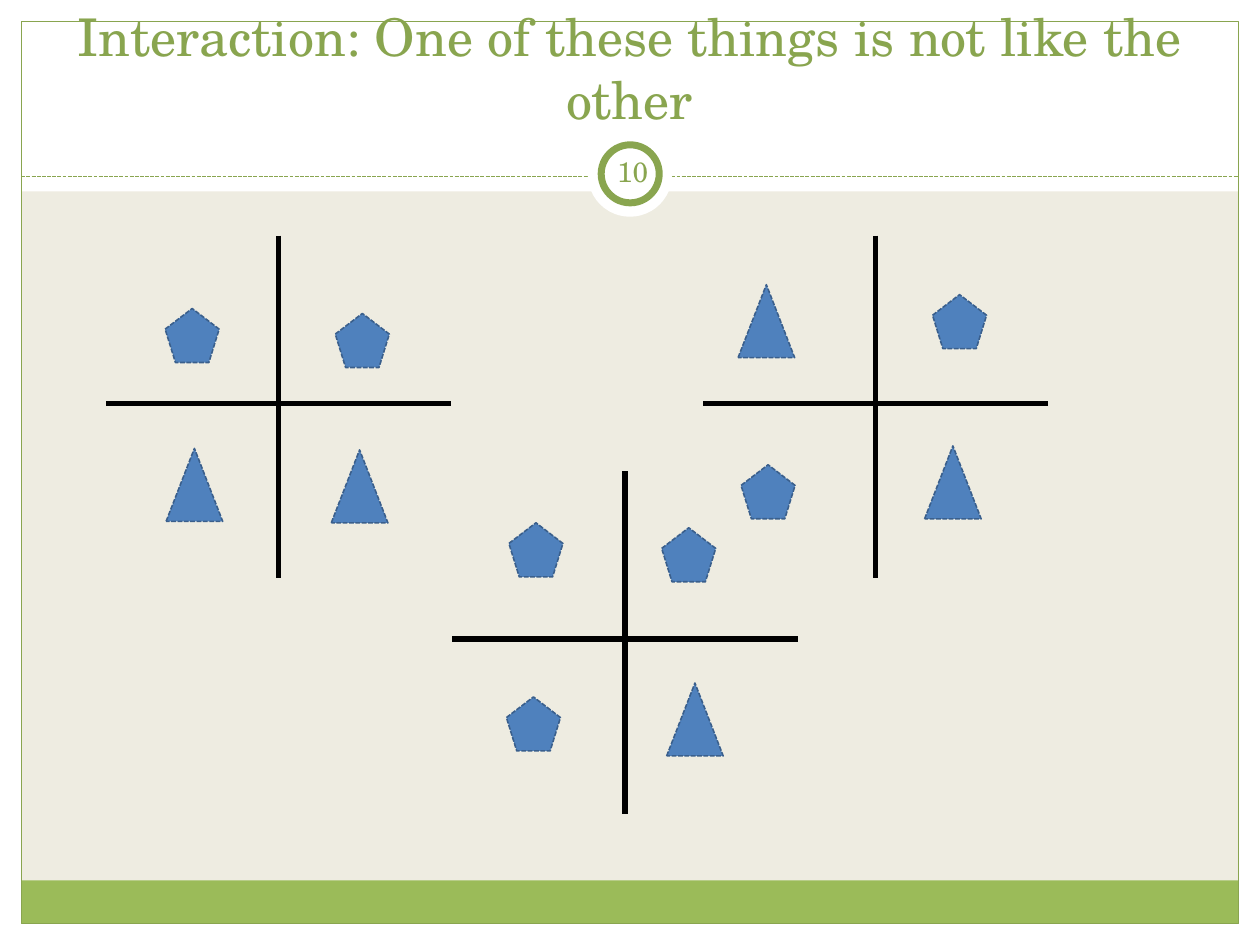
from typing import NamedTuple, Optional

from pptx import Presentation
from pptx import util as u
from pptx.dml.color import RGBColor
from pptx.enum import dml, shapes, text
from pptx.oxml.ns import qn
from lxml import etree

Kind = shapes.MSO_SHAPE
FONT = "TeX Gyre Schola"
HUES = {
    "paper": "EEECE1", "white": "FFFFFF", "band": "9BBB59", "green": "89A54F",
    "black": "000000", "blue": "4F81BD", "navy": "3A5F8C",
}
WIDE, HIGH, EDGE = 25.4, 19.05, 0.43


class Pen(NamedTuple):
    hue: str
    width: float
    dash: bool = False


class Box(NamedTuple):
    left: float
    top: float
    width: float
    height: float

    def cm(self) -> list:
        return [u.Cm(n) for n in self]


class Mark(NamedTuple):
    kind: Kind
    width: float
    height: float


class Cross(NamedTuple):
    """A centre and the marks of its four quarters, row by row."""
    x: float
    y: float
    marks: tuple


PENTA = Mark(Kind.REGULAR_PENTAGON, 1.09, 1.09)
TRI = Mark(Kind.ISOSCELES_TRIANGLE, 1.14, 1.47)
ARM, UP, DOWN = 3.48, 3.38, 3.53
CROSSES = (
    Cross(5.61, 8.13, ((PENTA, 3.33, 6.22), (PENTA, 6.76, 6.32),
                       (TRI, 3.35, 9.04), (TRI, 6.68, 9.07))),
    Cross(17.65, 8.13, ((TRI, 14.88, 5.74), (PENTA, 18.8, 5.94),
                        (PENTA, 14.94, 9.37), (TRI, 18.64, 8.99))),
    Cross(12.6, 12.88, ((PENTA, 10.26, 10.54), (PENTA, 13.34, 10.64),
                        (PENTA, 10.21, 14.05), (TRI, 13.44, 13.77))),
)


def rgb(hue: str) -> RGBColor:
    return RGBColor.from_string(HUES[hue])


def stroke(line, pen: Pen) -> None:
    line.color.rgb = rgb(pen.hue)
    line.width = u.Pt(pen.width)
    if pen.dash:
        line.dash_style = dml.MSO_LINE.SQUARE_DOT


def add_shape(slide, kind: Kind, box: Box, fill: Optional[str] = None,
              pen: Optional[Pen] = None) -> None:
    shape = slide.shapes.add_shape(kind, *box.cm())
    shape.shadow.inherit = False
    if fill:
        shape.fill.solid()
        shape.fill.fore_color.rgb = rgb(fill)
    else:
        shape.fill.background()
    if pen:
        stroke(shape.line, pen)
    else:
        shape.line.fill.background()


def add_line(slide, x1: float, y1: float, x2: float, y2: float, pen: Pen) -> None:
    ends = [u.Cm(n) for n in (x1, y1, x2, y2)]
    line = slide.shapes.add_connector(shapes.MSO_CONNECTOR.STRAIGHT, *ends)
    stroke(line.line, pen)
    etree.SubElement(line._element.spPr, qn("a:effectLst"))


def add_text(slide, words: str, box: Box, size: float, anchor, inset: tuple) -> None:
    frame = slide.shapes.add_textbox(*box.cm()).text_frame
    frame.word_wrap = True
    frame.vertical_anchor = anchor
    frame.margin_left = frame.margin_right = u.Cm(inset[0])
    frame.margin_top = frame.margin_bottom = u.Cm(inset[1])
    frame.text = words
    para = frame.paragraphs[0]
    para.alignment = text.PP_ALIGN.CENTER
    font = para.runs[0].font
    font.name, font.size = FONT, u.Pt(size)
    font.color.rgb = rgb("green")


def add_frame(slide) -> None:
    """Draw the white margins, green band, border and number ring."""
    inner, base = WIDE - 2 * EDGE, HIGH - EDGE
    for box in (Box(0, base, WIDE, EDGE), Box(0, 0, WIDE, 3.86),
                Box(0, 0, EDGE, HIGH), Box(WIDE - EDGE, 0, EDGE, HIGH)):
        add_shape(slide, Kind.RECTANGLE, box, "white")
    add_shape(slide, Kind.RECTANGLE, Box(EDGE, 17.75, inner, 0.87), "band")
    add_shape(slide, Kind.RECTANGLE, Box(EDGE, EDGE, inner, base - EDGE),
              pen=Pen("green", 0.75))
    add_line(slide, EDGE, 3.56, WIDE - EDGE, 3.56, Pen("green", 0.75, True))
    add_shape(slide, Kind.OVAL, Box(11.85, 2.67, 1.7, 1.7), "white")
    add_shape(slide, Kind.OVAL, Box(12.12, 2.92, 1.17, 1.17), "white", Pen("green", 4))


def add_cross(slide, cross: Cross) -> None:
    pen = Pen("black", 3)
    add_line(slide, cross.x, cross.y - UP, cross.x, cross.y + DOWN, pen)
    add_line(slide, cross.x + ARM, cross.y, cross.x - ARM, cross.y, pen)
    for mark, left, top in cross.marks:
        add_shape(slide, mark.kind, Box(left, top, mark.width, mark.height),
                  "blue", Pen("navy", 0.9, True))


def main() -> None:
    deck = Presentation()
    deck.slide_width, deck.slide_height = u.Cm(WIDE), u.Cm(HIGH)
    slide = deck.slides.add_slide(deck.slide_layouts[6])
    slide.background.fill.solid()
    slide.background.fill.fore_color.rgb = rgb("paper")
    add_frame(slide)
    add_text(slide, "Interaction: One of these things is not like the other",
             Box(0, 0.63, WIDE, 2.11), 29.7, text.MSO_ANCHOR.BOTTOM, (0.25, 0.13))
    add_text(slide, "10", Box(12.12, 2.84, 1.27, 1.22), 16,
             text.MSO_ANCHOR.MIDDLE, (0.13, 0.13))
    for cross in CROSSES:
        add_cross(slide, cross)
    deck.save("out.pptx")


if __name__ == "__main__":
    main()
